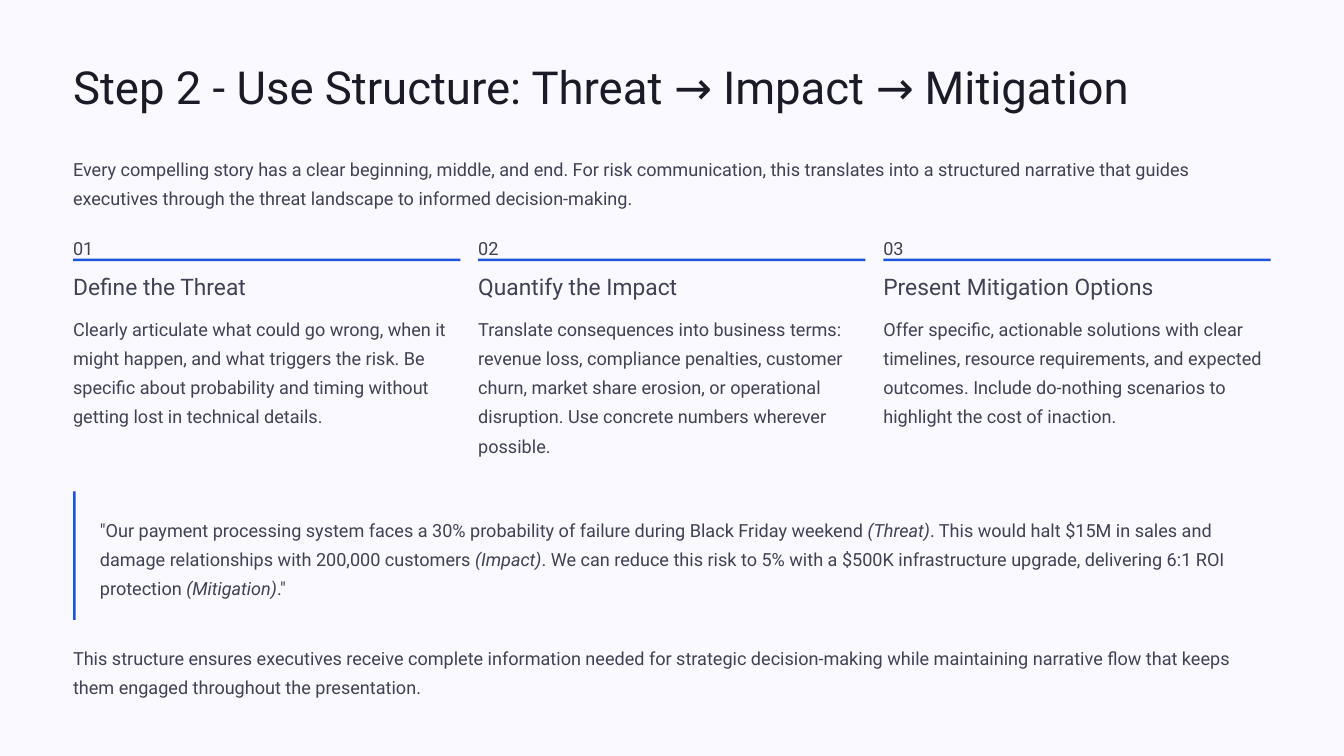
from pptx import Presentation
from pptx.dml.color import RGBColor
from pptx.enum.shapes import MSO_SHAPE
from pptx.util import Inches, Pt

TITLE = "Step 2 - Use Structure: Threat → Impact → Mitigation"
INTRO = ("Every compelling story has a clear beginning, middle, and end. For risk communication, "
         "this translates into a structured narrative that guides executives through the threat "
         "landscape to informed decision-making.")
# heading, heading width, body, body height
STEPS = [
    ("Define the Threat", 2.71,
     "Clearly articulate what could go wrong, when it might happen, and what triggers the risk. "
     "Be specific about probability and timing without getting lost in technical details.", 1.74),
    ("Quantify the Impact", 2.74,
     "Translate consequences into business terms: revenue loss, compliance penalties, customer "
     "churn, market share erosion, or operational disruption. Use concrete numbers wherever "
     "possible.", 1.74),
    ("Present Mitigation Options", 3.63,
     "Offer specific, actionable solutions with clear timelines, resource requirements, and "
     "expected outcomes. Include do-nothing scenarios to highlight the cost of inaction.", 1.39),
]
# runs alternate between upright and italic
QUOTE = [
    "\"Our payment processing system faces a 30% probability of failure during Black Friday weekend ",
    "(Threat)",
    ". This would halt $15M in sales and damage relationships with 200,000 customers ",
    "(Impact)",
    ". We can reduce this risk to 5% with a $500K infrastructure upgrade, delivering 6:1 ROI protection ",
    "(Mitigation)",
    ".\"",
]
CLOSING = ("This structure ensures executives receive complete information needed for strategic "
           "decision-making while maintaining narrative flow that keeps them engaged throughout "
           "the presentation.")

FONT = "Roboto"
PAPER, DARK, GREY, BLUE = "F9F9FF", "1B1B27", "404155", "1B54DA"
SLIDE_W, SLIDE_H = 16, 9
LEFT, WIDTH = 0.87, 14.26
COL_W, GAP = 4.61, 0.21
COL_STEP = (WIDTH + GAP) / len(STEPS)
RULE = 0.03

prs = Presentation()
prs.slide_width, prs.slide_height = Inches(SLIDE_W), Inches(SLIDE_H)
s = prs.slides.add_slide(prs.slide_layouts[6])


def paint(fill, color):
    fill.solid()
    fill.fore_color.rgb = RGBColor.from_string(color)


def add_text(text, x, y, w, h, size=15.5, color=GREY, leading=25, wrap=True):
    """Add a text box; a list of strings alternates upright and italic runs."""
    tf = s.shapes.add_textbox(Inches(x), Inches(y), Inches(w), Inches(h)).text_frame
    tf.margin_left = tf.margin_top = tf.margin_right = tf.margin_bottom = 0
    tf.word_wrap = wrap
    p = tf.paragraphs[0]
    p.line_spacing = Pt(leading)
    for i, part in enumerate([text] if isinstance(text, str) else text):
        r = p.add_run()
        r.text = part
        r.font.name = FONT
        r.font.size = Pt(size)
        r.font.italic = i % 2 == 1
        paint(r.font.fill, color)


def add_rect(x, y, w, h, color=BLUE):
    sp = s.shapes.add_shape(MSO_SHAPE.RECTANGLE, Inches(x), Inches(y), Inches(w), Inches(h))
    sp.shadow.inherit = False
    paint(sp.fill, color)
    sp.line.fill.background()


add_rect(0, 0, SLIDE_W, SLIDE_H, PAPER)
add_text(TITLE, LEFT, 0.68, 13.82, 0.68, size=39, color=DARK, leading=48.5, wrap=False)
add_text(INTRO, LEFT, 1.8, WIDTH, 0.69)

for i, (heading, heading_w, body, body_h) in enumerate(STEPS):
    x = LEFT + i * COL_STEP
    add_text(f"{i + 1:02}", x, 2.74, 0.3, 0.27, wrap=False)
    add_rect(x, 3.08, COL_W, RULE)
    add_text(heading, x, 3.24, heading_w, 0.34, size=19.5, leading=24, wrap=False)
    add_text(body, x, 3.7, COL_W, body_h)

add_text(QUOTE, 1.19, 6.09, 13.94, 1.04)
add_rect(LEFT, 5.85, RULE, 1.53)
add_text(CLOSING, LEFT, 7.62, WIDTH, 0.69)

prs.save("out.pptx")
